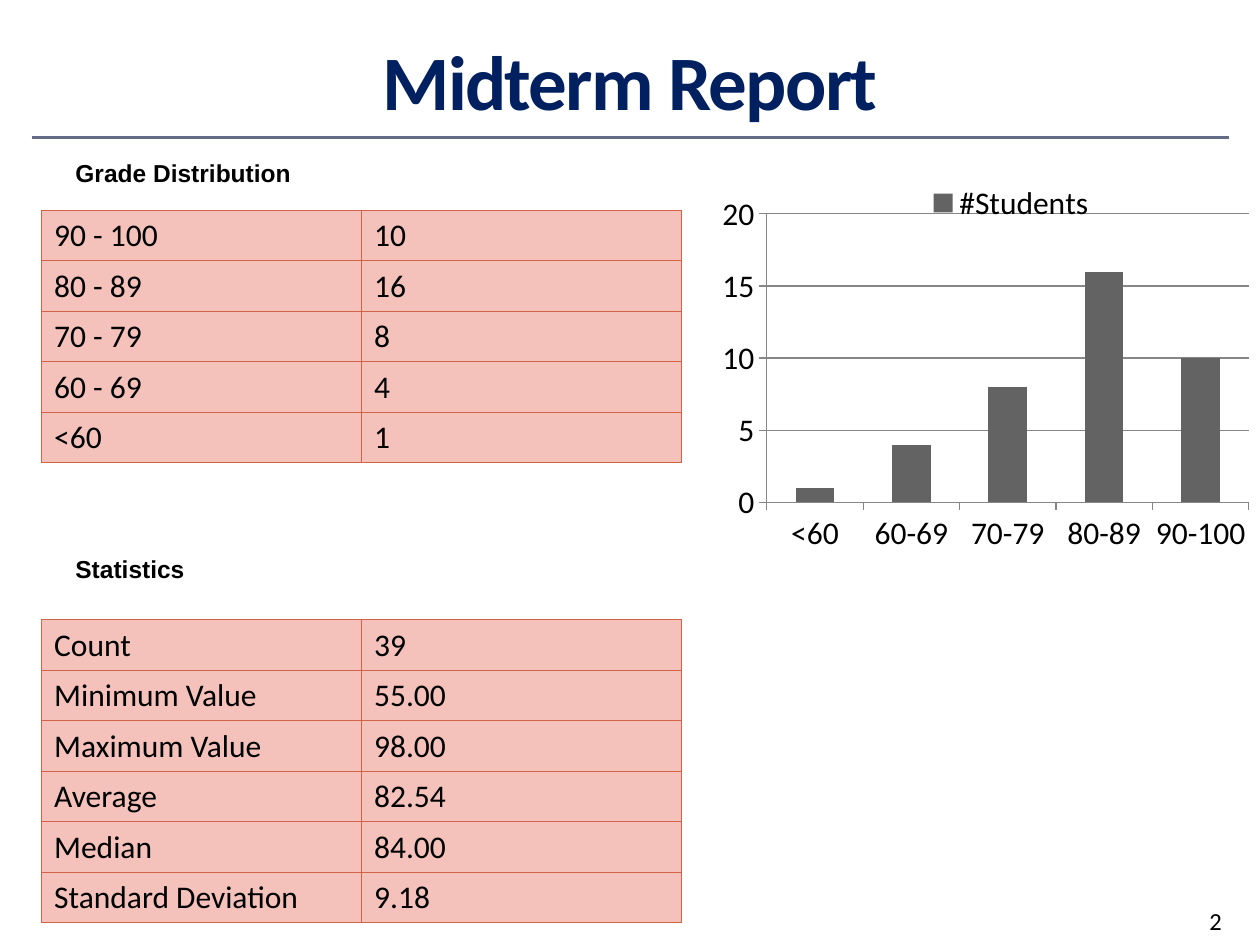
from lxml import etree
from pptx import Presentation
from pptx.chart.data import CategoryChartData
from pptx.dml.color import RGBColor
from pptx.enum.chart import XL_CHART_TYPE, XL_LEGEND_POSITION, XL_TICK_MARK
from pptx.enum.shapes import MSO_CONNECTOR
from pptx.enum.text import MSO_ANCHOR, PP_ALIGN
from pptx.oxml.ns import qn
from pptx.util import Inches, Pt

COLUMN = XL_CHART_TYPE.COLUMN_CLUSTERED
LEGEND_RIGHT = XL_LEGEND_POSITION.RIGHT
TICK_OUTSIDE = XL_TICK_MARK.OUTSIDE
STRAIGHT = MSO_CONNECTOR.STRAIGHT
TOP, MIDDLE = MSO_ANCHOR.TOP, MSO_ANCHOR.MIDDLE
LEFT, CENTER = PP_ALIGN.LEFT, PP_ALIGN.CENTER

COLORS = {
    "title": "002060",
    "rule": "646B86",
    "text": "000000",
    "cell": "F4C1BB",
    "border": "D16349",
    "bar": "636363",
    "grid": "868686",
}

GRADES = [("90 - 100", "10"), ("80 - 89", "16"), ("70 - 79", "8"),
          ("60 - 69", "4"), ("<60", "1")]
STATISTICS = [("Count", "39"), ("Minimum Value", "55.00"),
              ("Maximum Value", "98.00"), ("Average", "82.54"),
              ("Median", "84.00"), ("Standard Deviation", "9.18")]


class SlideBuilder:
    body_font = "Calibri"
    label_font = "Arial"
    body_size = 18

    def __init__(self, slide):
        self.slide = slide

    def color(self, name):
        return RGBColor.from_string(COLORS[name])

    def style(self, font, size, color="text", name=None, bold=False):
        font.name = name or self.body_font
        font.size = Pt(size)
        font.bold = bold
        font.color.rgb = self.color(color)

    def text(self, words, left, top, width, height, size, anchor=MIDDLE,
             align=LEFT, spacing=None, **style):
        box = self.slide.shapes.add_textbox(
            Inches(left), Inches(top), Inches(width), Inches(height))
        frame = box.text_frame
        frame.word_wrap = True
        frame.vertical_anchor = anchor
        para = frame.paragraphs[0]
        para.alignment = align
        span = para.add_run()
        span.text = words
        self.style(para.font, size, **style)
        if spacing is not None:
            span.font._element.set("spc", str(spacing * 100))

    def label(self, words, top):
        self.text(words, 0.5, top, 2.92, 0.34, 14,
                  name=self.label_font, bold=True)

    def rule(self, left, right, top):
        line = self.slide.shapes.add_connector(
            STRAIGHT, Inches(left), Inches(top), Inches(right), Inches(top))
        line.line.color.rgb = self.color("rule")
        line.line.width = Pt(1.5)
        etree.SubElement(line._element.spPr, qn("a:effectLst"))

    def border(self, cell):
        properties = cell._tc.get_or_add_tcPr()
        for index, side in enumerate(("lnL", "lnR", "lnT", "lnB")):
            edge = etree.Element(qn(f"a:{side}"), w=str(Pt(0.75)))
            fill = etree.SubElement(edge, qn("a:solidFill"))
            etree.SubElement(fill, qn("a:srgbClr"), val=COLORS["border"])
            properties.insert(index, edge)

    def table(self, rows, top):
        left, column_width, row_height = 0.33, 2.54, 0.4
        columns = len(rows[0])
        table = self.slide.shapes.add_table(
            len(rows), columns, Inches(left), Inches(top),
            Inches(column_width * columns),
            Inches(row_height * len(rows))).table
        table.first_row = False
        table.horz_banding = False
        for row, values in zip(table.rows, rows):
            for cell, value in zip(row.cells, values):
                cell.text = value
                cell.vertical_anchor = MIDDLE
                cell.fill.solid()
                cell.fill.fore_color.rgb = self.color("cell")
                self.border(cell)
                self.style(cell.text_frame.paragraphs[0].font, self.body_size)

    def place(self, parent, index, inner=False, **shares):
        layout = etree.Element(qn("c:layout"))
        manual = etree.SubElement(layout, qn("c:manualLayout"))
        if inner:
            etree.SubElement(manual, qn("c:layoutTarget"), val="inner")
        for mode in ("xMode", "yMode"):
            etree.SubElement(manual, qn(f"c:{mode}"), val="edge")
        for key, share in shares.items():
            etree.SubElement(manual, qn(f"c:{key}"), val=str(share))
        for old in parent.findall(qn("c:layout")):
            parent.remove(old)
        parent.insert(index, layout)

    def chart(self, name, categories, values, left, top, width, height):
        data = CategoryChartData()
        data.categories = categories
        data.add_series(name, values)
        chart = self.slide.shapes.add_chart(
            COLUMN, Inches(left), Inches(top), Inches(width),
            Inches(height), data).chart
        chart.has_title = False
        self.style(chart.font, self.body_size)
        plot = chart.plots[0]
        plot.gap_width = 150
        plot.vary_by_categories = False
        bars = plot.series[0].format.fill
        bars.solid()
        bars.fore_color.rgb = self.color("bar")

        scale = chart.value_axis
        scale.minimum_scale, scale.maximum_scale = 0, 20
        scale.major_unit = 5
        scale.has_major_gridlines = True
        lines = [scale.major_gridlines.format.line]
        for axis in (chart.category_axis, scale):
            axis.major_tick_mark = TICK_OUTSIDE
            lines.append(axis.format.line)
        for line in lines:
            line.color.rgb = self.color("grid")
            line.width = Pt(0.75)

        chart.has_legend = True
        chart.legend.position = LEGEND_RIGHT
        chart.legend.include_in_layout = False
        self.place(chart.legend._element, 1, x=0.42, y=0.01, w=0.33, h=0.09)
        self.place(chart._chartSpace.chart.plotArea, 0, inner=True,
                   x=0.21, y=0.08, w=0.74, h=0.66)


def main():
    deck = Presentation()
    deck.slide_width, deck.slide_height = Inches(10), Inches(7.5)
    page = SlideBuilder(deck.slides.add_slide(deck.slide_layouts[6]))
    page.rule(0.25, 9.75, 1.09)
    page.text("Midterm Report", 0.5, 0.17, 9, 0.92, 44, align=CENTER,
              spacing=-1, color="title", bold=True)
    page.label("Grade Distribution", 1.2)
    page.table(GRADES, 1.67)
    page.label("Statistics", 4.34)
    page.table(STATISTICS, 4.92)
    page.chart("#Students", ["<60", "60-69", "70-79", "80-89", "90-100"],
               [int(count) for _, count in reversed(GRADES)],
               5, 1.42, 5.17, 3.47)
    page.text("2", 9.5, 7.14, 0.5, 0.36, 14, anchor=TOP)
    deck.save("out.pptx")


if __name__ == "__main__":
    main()
